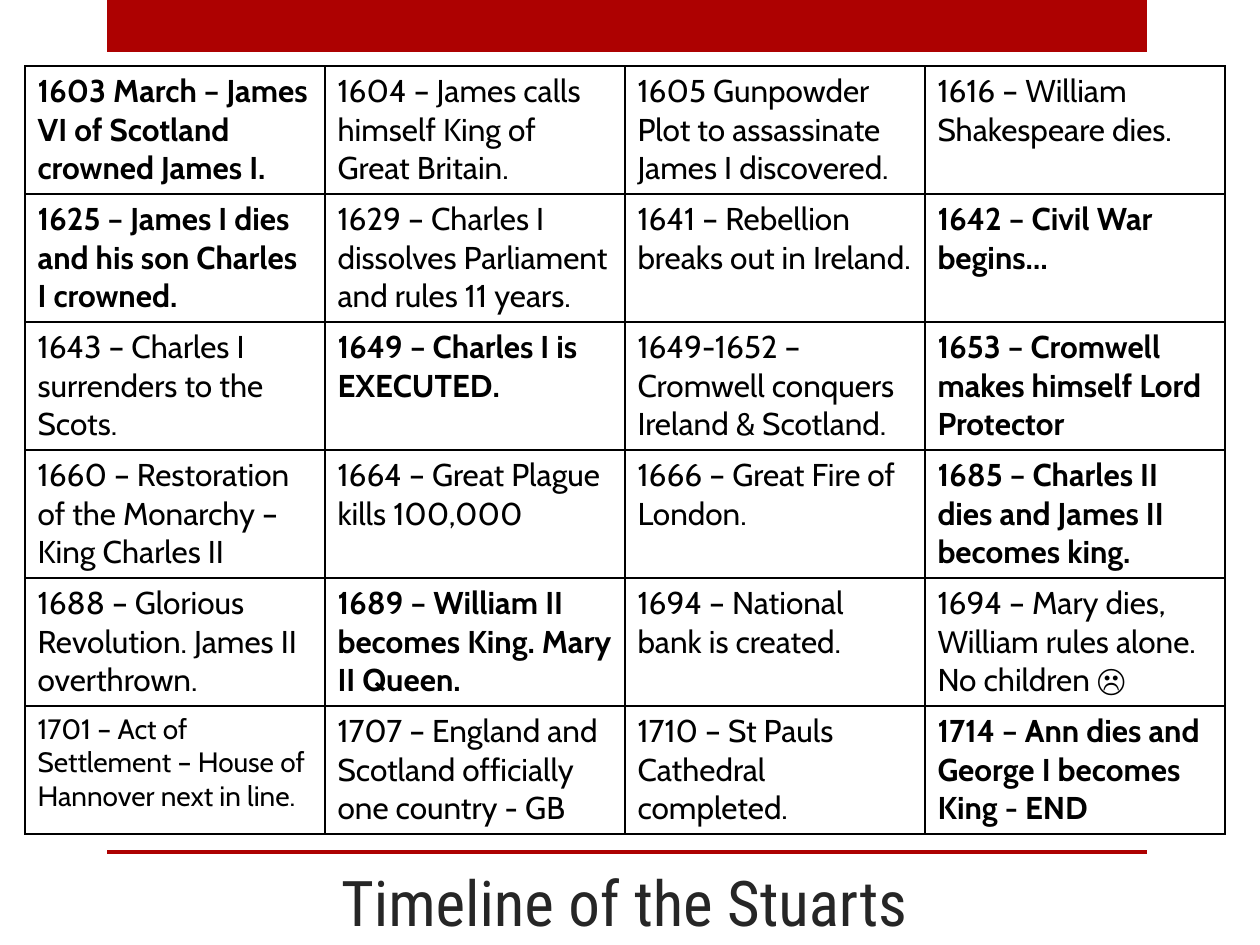
from dataclasses import dataclass

from lxml.etree import SubElement
from pptx import Presentation
from pptx.dml.color import RGBColor
from pptx.enum.shapes import MSO_SHAPE
from pptx.enum.text import MSO_ANCHOR, PP_ALIGN
from pptx.oxml.ns import qn
from pptx.util import Pt

PX = 914400 // 126


@dataclass(frozen=True)
class Theme:
    red: RGBColor = RGBColor(0xAD, 0x01, 0x01)
    title: RGBColor = RGBColor(0x26, 0x26, 0x26)
    body: RGBColor = RGBColor(0, 0, 0)
    border: str = "000000"
    title_font: str = "Roboto Condensed"
    body_font: str = "Cabin"
    title_size: Pt = Pt(36)
    body_size: Pt = Pt(18)
    small_size: Pt = Pt(16)


THEME = Theme()

EVENTS = [
    ["1603 March – James VI of Scotland crowned James I.",
     "1604 – James calls himself King of Great Britain.",
     "1605 Gunpowder Plot to assassinate James I discovered.",
     "1616 – William Shakespeare dies."],
    ["1625 – James I dies and his son Charles I crowned.",
     "1629 – Charles I dissolves Parliament and rules 11 years.",
     "1641 – Rebellion breaks out in Ireland.",
     "1642 – Civil War begins…"],
    ["1643 – Charles I surrenders to the Scots.",
     "1649 – Charles I is EXECUTED.",
     "1649-1652 – Cromwell conquers Ireland & Scotland.",
     "1653 – Cromwell makes himself Lord Protector"],
    ["1660 – Restoration of the Monarchy – King Charles II",
     "1664 – Great Plague kills 100,000",
     "1666 – Great Fire of London.",
     "1685 – Charles II dies and James II becomes king."],
    ["1688 – Glorious Revolution. James II overthrown.",
     "1689 – William II becomes King. Mary II Queen.",
     "1694 – National bank is created.",
     "1694 – Mary dies, William rules alone. No children ☹"],
    ["1701 – Act of Settlement – House of Hannover next in line.",
     "1707 – England and Scotland officially one country - GB",
     "1710 – St Pauls Cathedral completed.",
     "1714 – Ann dies and George I becomes King - END"],
]
KEY_EVENTS = {(0, 0), (1, 0), (1, 3), (2, 1), (2, 3), (3, 3), (4, 1), (5, 3)}
SMALL_EVENTS = {(5, 0)}


def style_span(span, font, size, color, bold=False):
    span.font.name = font
    span.font.size = size
    span.font.color.rgb = color
    span.font.bold = bold


def add_borders(cell):
    properties = cell._tc.get_or_add_tcPr()
    for index, side in enumerate(("lnL", "lnR", "lnT", "lnB")):
        line = properties.makeelement(qn(f"a:{side}"), {"w": str(Pt(1))})
        fill = SubElement(line, qn("a:solidFill"))
        SubElement(fill, qn("a:srgbClr"), val=THEME.border)
        properties.insert(index, line)


deck = Presentation()
deck.slide_width = 1260 * PX
deck.slide_height = 945 * PX
page = deck.slides.add_slide(deck.slide_layouts[5])

# Red band at the top and rule above the title
for top, height in ((0, 52), (850, 4)):
    bar = page.shapes.add_shape(
        MSO_SHAPE.RECTANGLE, 107 * PX, top * PX, 1040 * PX, height * PX)
    bar.shadow.inherit = False
    bar.fill.solid()
    bar.fill.fore_color.rgb = THEME.red
    bar.line.fill.background()

# Title
title = page.shapes.title
title.left, title.top = 104 * PX, 844 * PX
title.width, title.height = 1041 * PX, 101 * PX
title.text_frame.text = "Timeline of the Stuarts"
title.text_frame.vertical_anchor = MSO_ANCHOR.BOTTOM
heading = title.text_frame.paragraphs[0]
heading.alignment = PP_ALIGN.CENTER
style_span(heading.runs[0], THEME.title_font, THEME.title_size, THEME.title)

# Timeline table
timeline = page.shapes.add_table(
    len(EVENTS), len(EVENTS[0]), 25 * PX, 66 * PX, 1200 * PX, 756 * PX).table
timeline.first_row = False
timeline.horz_banding = False
for row_index, events in enumerate(EVENTS):
    for column_index, event in enumerate(events):
        place = (row_index, column_index)
        cell = timeline.cell(*place)
        cell.fill.background()
        add_borders(cell)
        cell.text_frame.text = event
        size = THEME.small_size if place in SMALL_EVENTS else THEME.body_size
        style_span(cell.text_frame.paragraphs[0].runs[0], THEME.body_font,
                   size, THEME.body, place in KEY_EVENTS)

deck.save("out.pptx")
